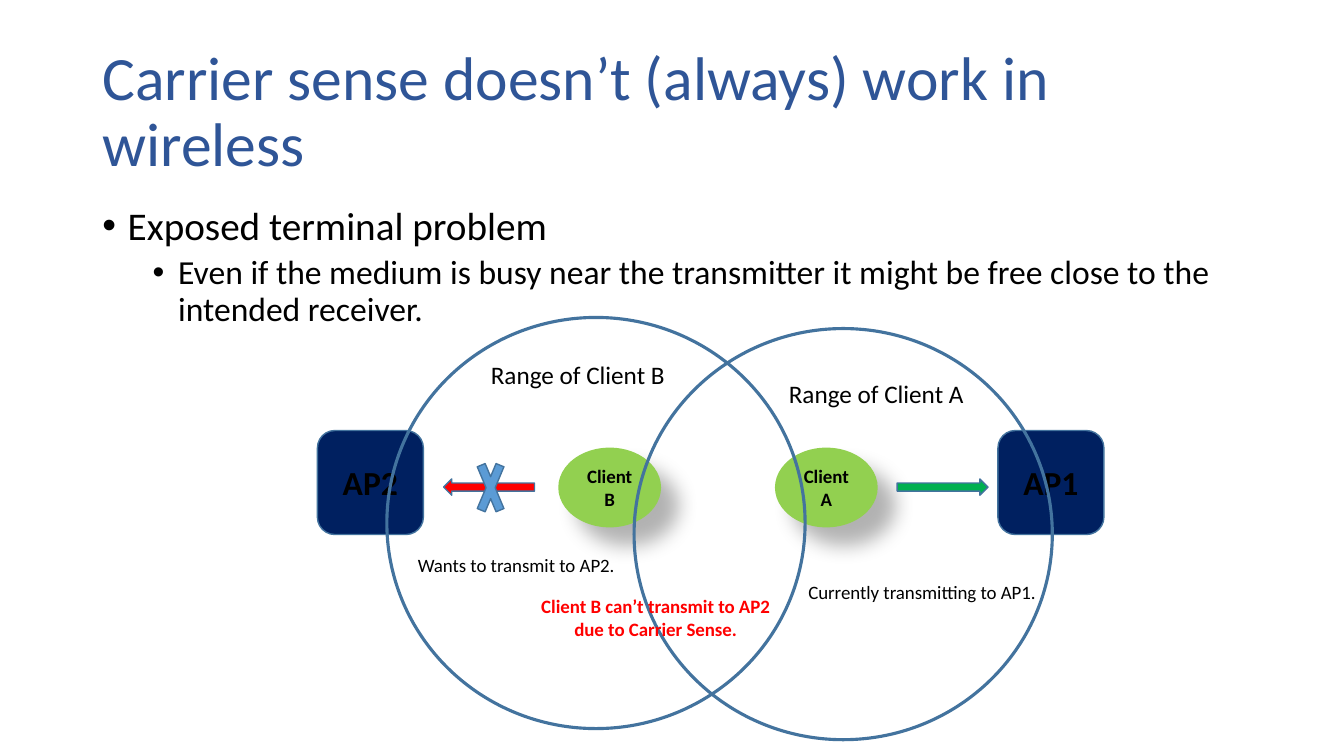
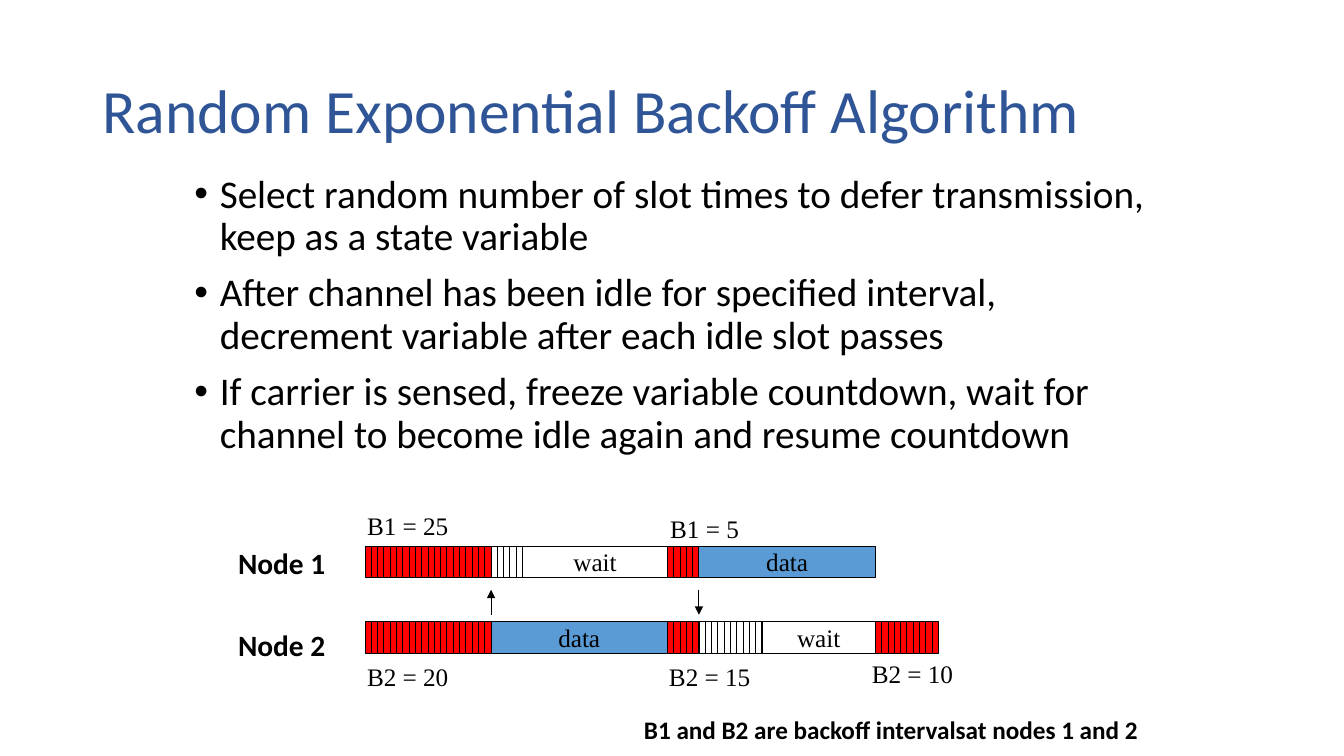
from lxml import etree
from pptx import Presentation
from pptx import util as u
from pptx.dml.color import RGBColor
from pptx.enum import shapes, text
from pptx.oxml import ns

Cm, Pt = u.Cm, u.Pt
GEO = shapes.MSO_SHAPE
LEFT, CENTER = text.PP_ALIGN.LEFT, text.PP_ALIGN.CENTER
TOP, MIDDLE = text.MSO_ANCHOR.TOP, text.MSO_ANCHOR.MIDDLE

SANS, SERIF = "Calibri", "Times New Roman"
BLACK, RED, BLUE, NAVY = "000000", "FF0000", "5B9BD5", "002060"
LIME, GREEN, OUTLINE, TITLE_BLUE = "92D050", "00B050", "43739E", "2F5597"
TITLE_BOX = (2.33, 1.02, 29.21, 3.68)
LEVELS = [dict(size=28, before=10, margin=0.64), dict(size=24, before=5, margin=1.91)]

EXPOSED = {
    "title": "Carrier sense doesn’t (always) work in wireless",
    "box": (2.33, 5.08, 29.21, 12.09),
    "points": [
        (0, "Exposed terminal problem"),
        (1, "Even if the medium is busy near the transmitter it might be free close to the intended receiver."),
    ],
}
ACCESS_POINTS = [("AP2", 8), ("AP1", 25.15)]
CLIENTS = [("Client B", 14.07), ("Client A", 19.53)]
RANGES = [(9.75, 8), (15.98, 8.28)]
RANGE_LABELS = [
    ("Range of Client A", (19.63, 9.4, 5.03, 1.02)),
    ("Range of Client B", (12.12, 8.92, 4.95, 1.02)),
]
ACTIVITIES = [
    ("Currently transmitting to AP1.", (20.12, 14.5, 6.35, 0.84), LEFT),
    ("Wants to transmit to AP2.", (10.24, 13.82, 5.54, 0.84), CENTER),
]
CONCLUSION = ["Client B can’t transmit to AP2", "due to Carrier Sense."]
TRANSMISSIONS = [(GEO.RIGHT_ARROW, 22.61, GREEN), (GEO.LEFT_ARROW, 11.18, RED)]

BACKOFF = {
    "title": "Random Exponential Backoff Algorithm",
    "box": (4.65, 4.27, 24.56, 14.17),
    "points": [
        (0, "Select random number of slot times to defer transmission, keep as a state variable"),
        (0, "After channel has been idle for specified interval, decrement variable after each idle slot passes"),
        (0, "If carrier is sensed, freeze variable countdown, wait for channel to become idle again and resume countdown"),
    ],
}
TIMELINES = [
    ("Node 1", 13.61, 13.76,
     [("count", 20), ("frozen", 5), ("wait", 23), ("count", 5), ("data", 28)]),
    ("Node 2", 15.67, 15.67,
     [("count", 20), ("data", 28), ("count", 5), ("frozen", 10), ("wait", 18), ("count", 10)]),
]
PHASE_FILL = {"count": RED, "frozen": None, "wait": None, "data": BLUE}
COUNTERS = [
    ("B1 = 25", 9, 12.73), ("B1 = 5", 16.64, 12.8),
    ("B2 = 20", 9, 16.54), ("B2 = 15", 16.61, 16.54), ("B2 = 10", 21.72, 16.46),
]
HANDOVERS = [(20, 15.49, 14.86), (53, 14.86, 15.49)]
START = 9.2
SLOT = 14.45 / 91
BAR_HEIGHT = 0.79
FOOTNOTE = "B1 and B2 are backoff intervalsat nodes 1 and 2"


def rgb(code):
    return RGBColor.from_string(code)


def lengths(box):
    return [Cm(value) for value in box]


def write(frame, lines, size, font=SANS, color=BLACK, bold=False,
          align=LEFT, anchor=TOP, wrap=True):
    frame.word_wrap = wrap
    frame.vertical_anchor = anchor
    for index, line in enumerate(lines):
        paragraph = frame.paragraphs[0] if index == 0 else frame.add_paragraph()
        paragraph.alignment = align
        run = paragraph.add_run()
        run.text = line
        run.font.name, run.font.size = font, Pt(size)
        run.font.bold = bold
        run.font.color.rgb = rgb(color)


def label(slide, box, lines, size, **style):
    frame = slide.shapes.add_textbox(*lengths(box)).text_frame
    write(frame, lines, size, **style)
    return frame


def outline(slide, kind, box, fill=None, line=OUTLINE, weight=1):
    shape = slide.shapes.add_shape(kind, *lengths(box))
    shape.shadow.inherit = False
    if fill:
        shape.fill.solid()
        shape.fill.fore_color.rgb = rgb(fill)
    else:
        shape.fill.background()
    if line:
        shape.line.color.rgb = rgb(line)
        shape.line.width = Pt(weight)
    else:
        shape.line.fill.background()
    return shape


def add(parent, tag, **attributes):
    return etree.SubElement(parent, ns.qn(tag), attributes)


def cast_shadow(shape):
    effects = shape._element.spPr.find(ns.qn("a:effectLst"))
    shadow = add(effects, "a:outerShdw", blurRad=str(Pt(15)), dist=str(Pt(18)),
                 dir=str(45 * 60000), algn="ctr", rotWithShape="0")
    color = add(shadow, "a:srgbClr", val=BLACK)
    add(color, "a:alpha", val="30000")


def start_slide(deck, content):
    slide = deck.slides.add_slide(deck.slide_layouts[6])
    title = label(slide, TITLE_BOX, [content["title"]], 44, color=TITLE_BLUE, anchor=MIDDLE)
    title.paragraphs[0].line_spacing = 0.9
    body = slide.shapes.add_textbox(*lengths(content["box"])).text_frame
    write(body, [point for _, point in content["points"]], 28)
    for index, (paragraph, (depth, _)) in enumerate(zip(body.paragraphs, content["points"])):
        level = LEVELS[depth]
        properties = paragraph._p.get_or_add_pPr()
        properties.set("marL", str(Cm(level["margin"])))
        properties.set("indent", str(Cm(-0.64)))
        add(properties, "a:buFont", typeface="Arial")
        add(properties, "a:buChar", char="•")
        paragraph.level = depth
        paragraph.line_spacing = 0.9
        if index:
            paragraph.space_before = Pt(level["before"])
        paragraph.runs[0].font.size = Pt(level["size"])
    return slide


def draw_exposed_terminal(deck):
    slide = start_slide(deck, EXPOSED)
    for name, left in ACCESS_POINTS:
        station = outline(slide, GEO.ROUNDED_RECTANGLE, (left, 10.85, 2.67, 2.62), NAVY)
        write(station.text_frame, [name], 24, bold=True, align=CENTER, anchor=MIDDLE)
    for name, left in CLIENTS:
        client = outline(slide, GEO.OVAL, (left, 11.28, 2.59, 2.01), LIME, line=None)
        cast_shadow(client)
        write(client.text_frame, [name], 13.5, bold=True, align=CENTER, anchor=MIDDLE)
    for left, top in RANGES:
        outline(slide, GEO.OVAL, (left, top, 10.54, 10.36), weight=2.25)
    for caption, box in RANGE_LABELS:
        label(slide, box, [caption], 18, wrap=False)
    for caption, box, align in ACTIVITIES:
        label(slide, box, [caption], 13.5, align=align, wrap=False)
    label(slide, (13.06, 14.86, 6.93, 1.42), CONCLUSION, 13.5, color=RED, bold=True, align=CENTER)
    for kind, left, fill in TRANSMISSIONS:
        outline(slide, kind, (left, 12.07, 2.29, 0.41), fill)
    outline(slide, GEO.MATH_MULTIPLY, (11.91, 11.2, 0.91, 2.18), BLUE)


def draw_phase(slide, phase, slots, first, top):
    left, fill = START + first * SLOT, PHASE_FILL[phase]
    if phase in ("count", "frozen"):
        for index in range(slots):
            outline(slide, GEO.RECTANGLE, (left + index * SLOT, top, SLOT, BAR_HEIGHT),
                    fill, BLACK, 0.75)
    else:
        bar = outline(slide, GEO.RECTANGLE, (left, top, slots * SLOT, BAR_HEIGHT),
                      fill, BLACK, 0.75)
        write(bar.text_frame, [phase], 18, font=SERIF, align=CENTER, anchor=MIDDLE, wrap=False)


def draw_handover(slide, slot, begin, end):
    x = START + slot * SLOT
    arrow = slide.shapes.add_connector(shapes.MSO_CONNECTOR.STRAIGHT,
                                       *lengths((x, begin, x, end)))
    arrow.line.color.rgb = rgb(BLACK)
    arrow.line.width = Pt(0.75)
    add(arrow.line._get_or_add_ln(), "a:tailEnd", type="triangle")
    add(arrow._element.spPr, "a:effectLst")


def draw_backoff(deck):
    slide = start_slide(deck, BACKOFF)
    for node, name_top, bar_top, phases in TIMELINES:
        label(slide, (5.75, name_top, 2.77, 1.14), [node], 21, bold=True, wrap=False)
        first = 0
        for phase, slots in phases:
            draw_phase(slide, phase, slots, first, bar_top)
            first += slots
    for counter, left, top in COUNTERS:
        width = 2.59 if len(counter) == 7 else 2.26
        label(slide, (left, top, width, 1.02), [counter], 18, font=SERIF, wrap=False)
    for handover in HANDOVERS:
        draw_handover(slide, *handover)
    label(slide, (15.98, 17.88, 13.72, 1.02), [FOOTNOTE], 18, bold=True, anchor=MIDDLE)


def main():
    deck = Presentation()
    deck.slide_width, deck.slide_height = Cm(33.87), Cm(19.05)
    draw_exposed_terminal(deck)
    draw_backoff(deck)
    deck.save("out.pptx")


if __name__ == "__main__":
    main()
